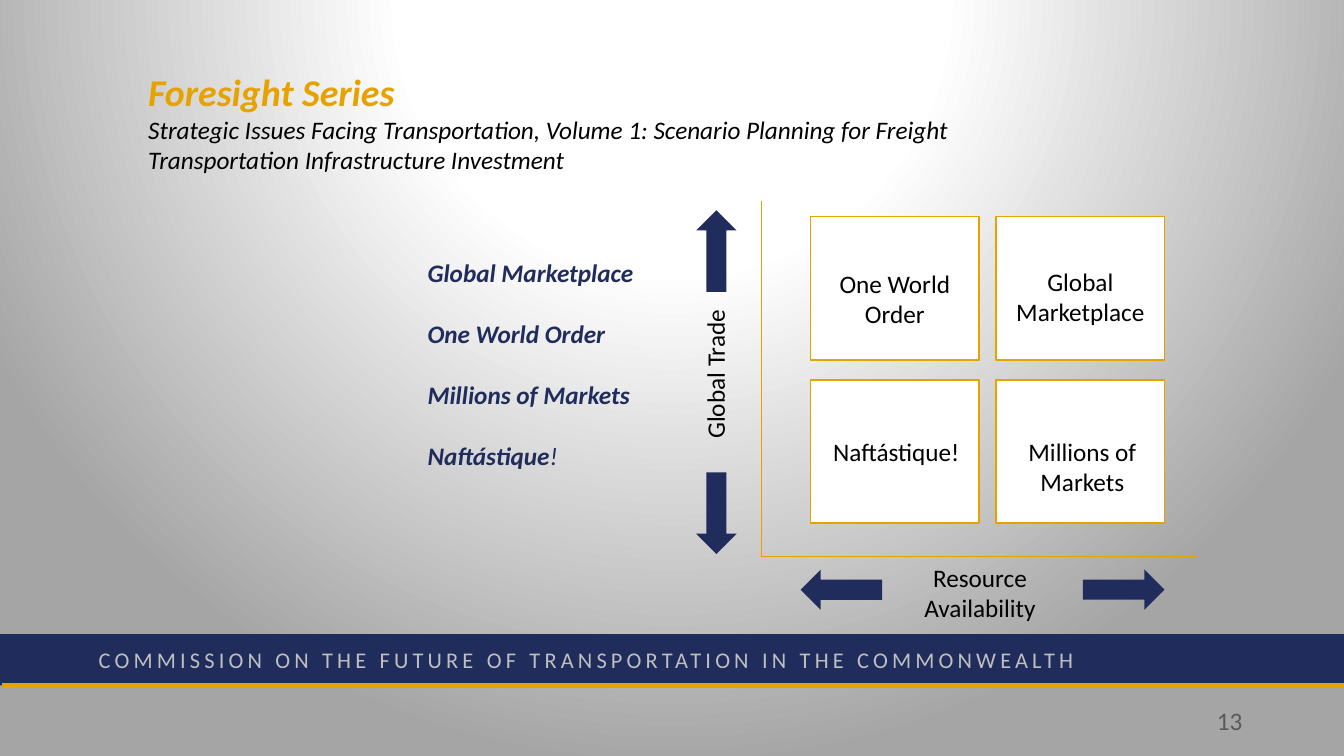
"""Build the Foresight Series scenario planning slide."""
import pptx
import pptx.util
import pptx.dml.color
import pptx.enum.shapes
import pptx.enum.text
import pptx.oxml
import pptx.oxml.ns

Inches = pptx.util.Inches
Pt = pptx.util.Pt
SHAPES = pptx.enum.shapes.MSO_SHAPE
ALIGN = pptx.enum.text.PP_ALIGN
COLORS = {
    "navy": "1F2C5C",
    "gold": "E6A300",
    "white": "FFFFFF",
    "black": "000000",
    "backdrop": "A5A5A5",
    "footer": "BFBFBF",
    "number": "595959",
}


def rgb(name):
    return pptx.dml.color.RGBColor.from_string(COLORS[name])


def paint_background(slide):
    slide.background.fill.gradient()
    old = slide.element.find(".//" + pptx.oxml.ns.qn("a:gradFill"))
    stops = "".join(
        f'<a:gs pos="{position}"><a:srgbClr val="{COLORS[color]}"/></a:gs>'
        for position, color in ((0, "white"), (35000, "white"), (100000, "backdrop"))
    )
    radial = pptx.oxml.parse_xml(
        f'<a:gradFill {pptx.oxml.ns.nsdecls("a")} rotWithShape="1"><a:gsLst>{stops}</a:gsLst>'
        '<a:path path="circle"><a:fillToRect l="50000" t="-80000" r="50000" b="180000"/></a:path>'
        "</a:gradFill>"
    )
    old.getparent().replace(old, radial)


def format_font(font, size, color, bold=False, italic=False):
    font.name = "Calibri"
    font.size = Pt(size)
    font.color.rgb = rgb(color)
    font.bold = bold
    font.italic = italic


def place(shape, left, top, width, height):
    shape.left, shape.top = Inches(left), Inches(top)
    shape.width, shape.height = Inches(width), Inches(height)


def prepare_frame(placeholder):
    frame = placeholder.text_frame
    frame.word_wrap = True
    frame.auto_size = pptx.enum.text.MSO_AUTO_SIZE.NONE
    frame.vertical_anchor = pptx.enum.text.MSO_ANCHOR.TOP
    frame.margin_top = Inches(0.35)
    return frame


def fill_title(title):
    place(title, 1.37, 0.33, 8.39, 1.77)
    frame = prepare_frame(title)
    frame.text = (
        "Foresight Series\nStrategic Issues Facing Transportation, Volume 1: "
        "Scenario Planning for Freight Transportation Infrastructure Investment"
    )
    heading, subtitle = frame.paragraphs
    for paragraph in (heading, subtitle):
        paragraph.alignment = ALIGN.LEFT
        paragraph.space_before = Pt(0)
    format_font(heading.runs[0].font, 27, "gold", bold=True, italic=True)
    format_font(subtitle.runs[0].font, 18, "black", italic=True)


def fill_scenarios(body):
    place(body, 4.14, 2.2, 2.76, 3.13)
    frame = prepare_frame(body)
    frame.text = "Global Marketplace\nOne World Order\nMillions of Markets\nNaftástique"
    frame.paragraphs[-1].add_run().text = "!"
    for index, paragraph in enumerate(frame.paragraphs):
        properties = paragraph._p.get_or_add_pPr()
        properties.set("marL", "0")
        properties.set("indent", "0")
        properties.append(pptx.oxml.parse_xml(f'<a:buNone {pptx.oxml.ns.nsdecls("a")}/>'))
        paragraph.space_before = Pt(22 if index else 0)
        for run in paragraph.runs:
            format_font(run.font, 18, "navy", bold=run.text != "!", italic=True)


def add_label(slide, text, box, align=ALIGN.CENTER, size=18, color="black", rotation=0):
    label = slide.shapes.add_textbox(*map(Inches, box))
    label.rotation = rotation
    label.text_frame.word_wrap = True
    label.text_frame.text = text
    paragraph = label.text_frame.paragraphs[0]
    paragraph.alignment = align
    format_font(paragraph.runs[0].font, size, color)
    return paragraph.runs[0]


def add_block(slide, kind, box, fill, line=None, rotation=0):
    block = slide.shapes.add_shape(kind, *map(Inches, box))
    block.shadow.inherit = False
    block.rotation = rotation
    block.fill.solid()
    block.fill.fore_color.rgb = rgb(fill)
    if line:
        block.line.color.rgb = rgb(line)
        block.line.width = Pt(1)
    else:
        block.line.fill.background()


def add_rule(slide, ends, width):
    rule = slide.shapes.add_connector(
        pptx.enum.shapes.MSO_CONNECTOR.STRAIGHT, *map(Inches, ends)
    )
    rule.line.color.rgb = rgb("gold")
    rule.line.width = Pt(width)
    rule._element.spPr.append(
        pptx.oxml.parse_xml(f'<a:effectLst {pptx.oxml.ns.nsdecls("a")}/>')
    )


def add_footer(slide):
    add_block(slide, SHAPES.RECTANGLE, (0, 6.29, 13.33, 0.51), "navy")
    add_rule(slide, (0.02, 6.8, 13.33, 6.8), 3)
    commission = add_label(
        slide, "COMMISSION ON THE FUTURE OF TRANSPORTATION IN THE COMMONWEALTH",
        (0.88, 6.36, 10.45, 0.37), ALIGN.LEFT, 16, "footer",
    )
    commission._r.get_or_add_rPr().set("spc", "300")
    add_label(slide, "13", (9.42, 6.95, 3, 0.4), ALIGN.RIGHT, color="number")


def add_matrix(slide):
    for top in (2.15, 3.77):
        for left in (8.04, 9.88):
            add_block(slide, SHAPES.RECTANGLE, (left, top, 1.67, 1.42), "white", "gold")
    for text, box in (
        ("One World Order", (8.19, 2.61, 1.37, 0.71)),
        ("Global Marketplace", (9.96, 2.59, 1.51, 0.71)),
        ("Naftástique!", (8.14, 4.28, 1.5, 0.71)),
        ("Millions of Markets", (10.05, 4.28, 1.37, 0.71)),
        ("Resource Availability", (8.89, 5.53, 1.66, 0.71)),
    ):
        add_label(slide, text, box)
    add_label(slide, "Global Trade", (6.24, 3.4, 1.7, 0.4), ALIGN.LEFT, rotation=270)


def add_axes(slide):
    add_rule(slide, (7.55, 1.99, 7.55, 5.52), 0.5)
    add_rule(slide, (7.55, 5.52, 11.87, 5.52), 0.5)
    for left, top, rotation in (
        (6.7, 2.29, 270), (6.7, 4.89, 90), (7.94, 5.65, 180), (10.74, 5.65, 0)
    ):
        add_block(slide, SHAPES.RIGHT_ARROW, (left, top, 0.81, 0.4), "navy", rotation=rotation)


def main():
    deck = pptx.Presentation()
    deck.slide_width, deck.slide_height = Inches(13.33), Inches(7.5)
    slide = deck.slides.add_slide(deck.slide_layouts[1])
    paint_background(slide)
    fill_title(slide.shapes.title)
    fill_scenarios(slide.placeholders[1])
    add_footer(slide)
    add_matrix(slide)
    add_axes(slide)
    deck.save("out.pptx")


if __name__ == "__main__":
    main()
